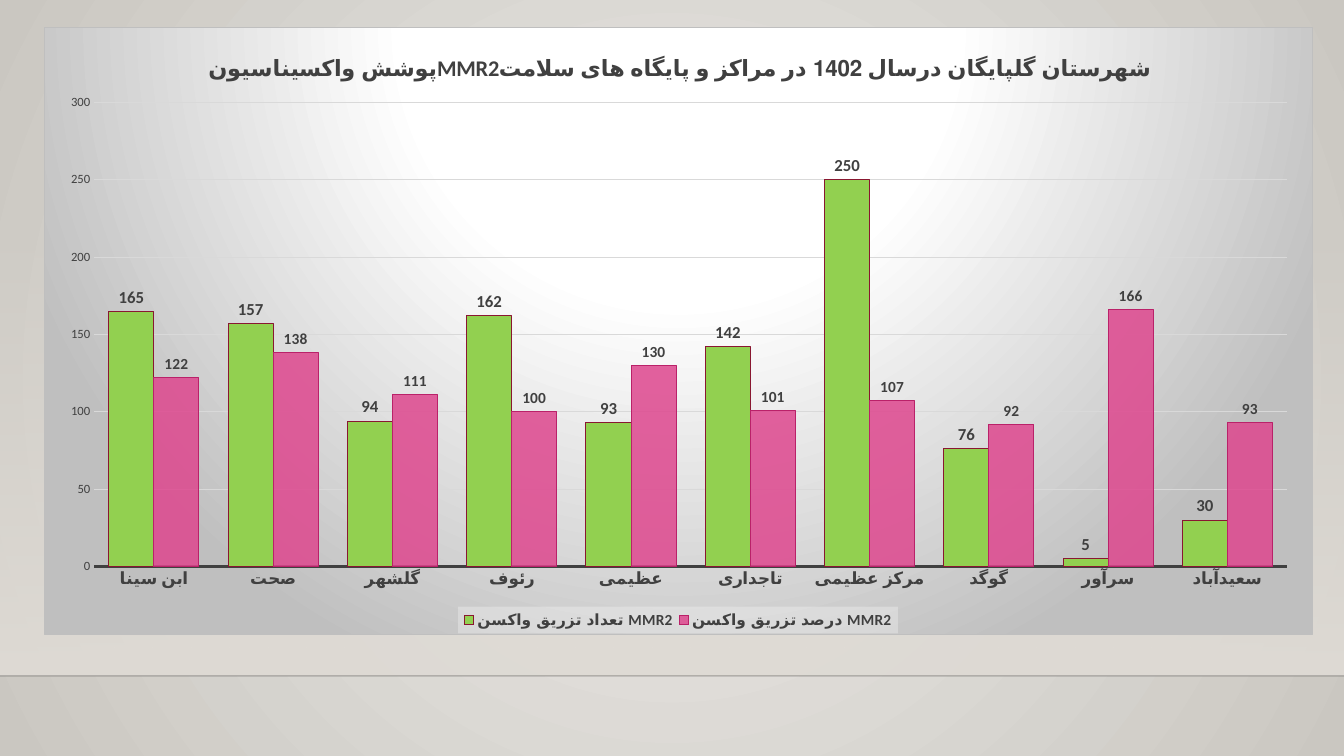
"""Build a slide with a clustered column chart of MMR2 vaccination by health centre."""
import dataclasses
import typing

import pptx
import pptx.chart.data
import pptx.dml.color
import pptx.dml.fill
import pptx.dml.line
import pptx.enum.chart
import pptx.enum.shapes
import pptx.oxml
import pptx.oxml.ns
import pptx.util

qn = pptx.oxml.ns.qn
Pt = pptx.util.Pt
FONT = "Calibri"
COLORS = {
    "text": "404040", "grid": "D9D9D9", "edge": "BFBFBF", "white": "FFFFFF",
    "wall": "ECEAE7", "wall_edge": "CAC7C1", "floor": "DFDBD5", "rule": "000001",
    "count": "92D050", "count_line": "891731",
    "percent": "DE478E", "percent_line": "BA2169", "legend": "F2F2F2",
}
CATEGORIES = ["ابن سینا", "صحت", "گلشهر", "رئوف", "عظیمی", "تاجداری",
              "مرکز عظیمی", "گوگد", "سرآور", "سعیدآباد"]
TITLE = "پوشش واکسیناسیونMMR2شهرستان گلپایگان درسال 1402 در مراکز و پایگاه های سلامت"


@dataclasses.dataclass
class Series:
    name: str
    values: list[int]
    color: str
    line: str
    label_size: int
    opacity: int = 100


@dataclasses.dataclass
class Box:
    x: float
    y: float
    w: float = 0
    h: float = 0


SERIES = [
    Series("تعداد تزریق واکسن MMR2", [165, 157, 94, 162, 93, 142, 250, 76, 5, 30],
           "count", "count_line", 12),
    Series("درصد تزریق واکسن MMR2", [122, 138, 111, 100, 130, 101, 107, 92, 166, 93],
           "percent", "percent_line", 11, 85),
]
CHART = Box(0.033, 0.036, 0.944, 0.804)
FLOOR = Box(0, 0.295, 1, 0.599)
PLOT = Box(0.039, 0.123, 0.941, 0.765)
TITLE_AT = Box(0.126, 0.035)
LEGEND = Box(0.326, 0.954, 0.347, 0.044)


def element(xml: str) -> typing.Any:
    ns = pptx.oxml.ns.nsdecls("a", "c")
    return pptx.oxml.parse_xml(xml.replace(" ", f" {ns} ", 1))


def color_xml(color: str, opacity: int = 100) -> str:
    return (f'<a:srgbClr val="{COLORS[color]}">'
            f'<a:alpha val="{opacity * 1000}"/></a:srgbClr>')


def paint(fill: typing.Any, color: str, opacity: int = 100) -> None:
    fill.solid()
    fill.fore_color.rgb = pptx.dml.color.RGBColor.from_string(COLORS[color])
    if opacity < 100:
        rgb = fill._xPr.find(f"{qn('a:solidFill')}/{qn('a:srgbClr')}")
        rgb.append(element(f'<a:alpha val="{opacity * 1000}" />'))


def gradient(fill: typing.Any, stops: list[tuple], center: typing.Optional[int] = None) -> None:
    fill.solid()
    solid = fill._xPr.find(qn("a:solidFill"))
    gs = "".join(f'<a:gs pos="{pos * 1000}">{color_xml(*color)}</a:gs>' for pos, *color in stops)
    if center is None:
        shade = '<a:lin ang="5400000" scaled="0"/>'
    else:
        shade = (f'<a:path path="circle"><a:fillToRect l="50000" t="{center * 1000}" '
                 f'r="50000" b="{(100 - center) * 1000}"/></a:path>')
    solid.getparent().replace(
        solid, element(f'<a:gradFill rotWithShape="1"><a:gsLst>{gs}</a:gsLst>{shade}</a:gradFill>'))


def stroke(line: typing.Any, color: str, width: float, opacity: int = 100) -> None:
    line.width = Pt(width)
    paint(line.fill, color, opacity)


def set_font(font: typing.Any, size: float, bold: bool = True) -> None:
    font.name, font.size, font.bold = FONT, Pt(size), bold
    font.color.rgb = pptx.dml.color.RGBColor.from_string(COLORS["text"])


def write(tf: typing.Any, text: str, **style: typing.Any) -> None:
    r = tf.paragraphs[0].add_run()
    r.text = text
    set_font(r.font, **style)


def place(parent: typing.Any, box: Box, after: typing.Optional[str] = None) -> None:
    for old in parent.findall(qn("c:layout")):
        parent.remove(old)
    target = '<c:layoutTarget val="inner"/>' if after is None else ""
    modes = '<c:xMode val="edge"/><c:yMode val="edge"/>'
    sizes = "".join(f'<c:{k} val="{v}"/>' for k, v in dataclasses.asdict(box).items() if v)
    layout = element(f'<c:layout ><c:manualLayout>{target}{modes}{sizes}'
                     '</c:manualLayout></c:layout>')
    if after is None:
        parent.insert(0, layout)
    else:
        parent.find(qn(after)).addnext(layout)


def add_format(anchor: typing.Any) -> tuple:
    sp_pr = element("<c:spPr />")
    anchor.addnext(sp_pr)
    return pptx.dml.fill.FillFormat.from_fill_parent(sp_pr), pptx.dml.line.LineFormat(sp_pr)


def add_backdrop(prs: typing.Any, slide: typing.Any) -> None:
    gradient(slide.background.fill, [(0, "wall"), (100, "wall_edge")], 50)
    w, h = prs.slide_width, prs.slide_height
    top, bottom = int(FLOOR.y * h), int((FLOOR.y + FLOOR.h) * h)
    sp = slide.shapes.add_shape(pptx.enum.shapes.MSO_SHAPE.RECTANGLE, 0, top, w, bottom - top)
    sp.shadow.inherit = False
    sp.line.fill.background()
    gradient(sp.fill, [(0, "floor", 0), (100, "floor")])
    rule = slide.shapes.add_connector(pptx.enum.shapes.MSO_CONNECTOR.STRAIGHT, 0, bottom, w, bottom)
    stroke(rule.line, "rule", 1, 20)
    rule._element.spPr.append(element("<a:effectLst />"))


def style_axes(chart: typing.Any) -> None:
    none = pptx.enum.chart.XL_TICK_MARK.NONE
    cat, val = chart.category_axis, chart.value_axis
    for axis, size, bold in ((cat, 12, True), (val, 9, False)):
        axis.major_tick_mark = axis.minor_tick_mark = none
        set_font(axis.tick_labels.font, size, bold)
    stroke(cat.format.line, "text", 1.5)
    val.format.line.fill.background()
    val.minimum_scale, val.maximum_scale, val.major_unit = 0, 300, 50
    val.has_major_gridlines = True
    stroke(val.major_gridlines.format.line, "grid", 0.75)


def style_series(plot: typing.Any) -> None:
    plot.gap_width, plot.overlap, plot.vary_by_categories = 65, 0, False
    for ser, data in zip(plot.series, SERIES):
        paint(ser.format.fill, data.color, data.opacity)
        stroke(ser.format.line, data.line, 0.75)
        ser.invert_if_negative = False
        labels = ser.data_labels
        labels.show_value = True
        labels.position = pptx.enum.chart.XL_LABEL_POSITION.OUTSIDE_END
        set_font(labels.font, data.label_size)


def add_chart(prs: typing.Any, slide: typing.Any) -> None:
    data = pptx.chart.data.CategoryChartData(number_format="General")
    data.categories = CATEGORIES
    for s in SERIES:
        data.add_series(s.name, s.values)
    w, h = prs.slide_width, prs.slide_height
    chart = slide.shapes.add_chart(
        pptx.enum.chart.XL_CHART_TYPE.COLUMN_CLUSTERED, int(CHART.x * w), int(CHART.y * h),
        int(CHART.w * w), int(CHART.h * h), data).chart
    set_font(chart.font, 10, False)
    root = chart._chartSpace.find(qn("c:chart"))
    fill, line = add_format(root)
    gradient(fill, [(0, "white"), (39, "white"), (100, "edge")], -80)
    stroke(line, "edge", 0.75)

    chart.has_title = True
    write(chart.chart_title.text_frame, TITLE, size=16)
    place(root.find(qn("c:title")), TITLE_AT, "c:tx")
    place(root.find(qn("c:plotArea")), PLOT)
    style_axes(chart)
    style_series(chart.plots[0])

    chart.has_legend = True
    chart.legend.position = pptx.enum.chart.XL_LEGEND_POSITION.BOTTOM
    chart.legend.include_in_layout = False
    set_font(chart.legend.font, 11)
    legend = root.find(qn("c:legend"))
    place(legend, LEGEND, "c:legendPos")
    paint(add_format(legend.find(qn("c:overlay")))[0], "legend", 39)


def main() -> None:
    prs = pptx.Presentation()
    prs.slide_width, prs.slide_height = pptx.util.Inches(13.33), pptx.util.Inches(7.5)
    slide = prs.slides.add_slide(prs.slide_layouts[6])
    add_backdrop(prs, slide)
    add_chart(prs, slide)
    prs.save("out.pptx")


if __name__ == "__main__":
    main()
